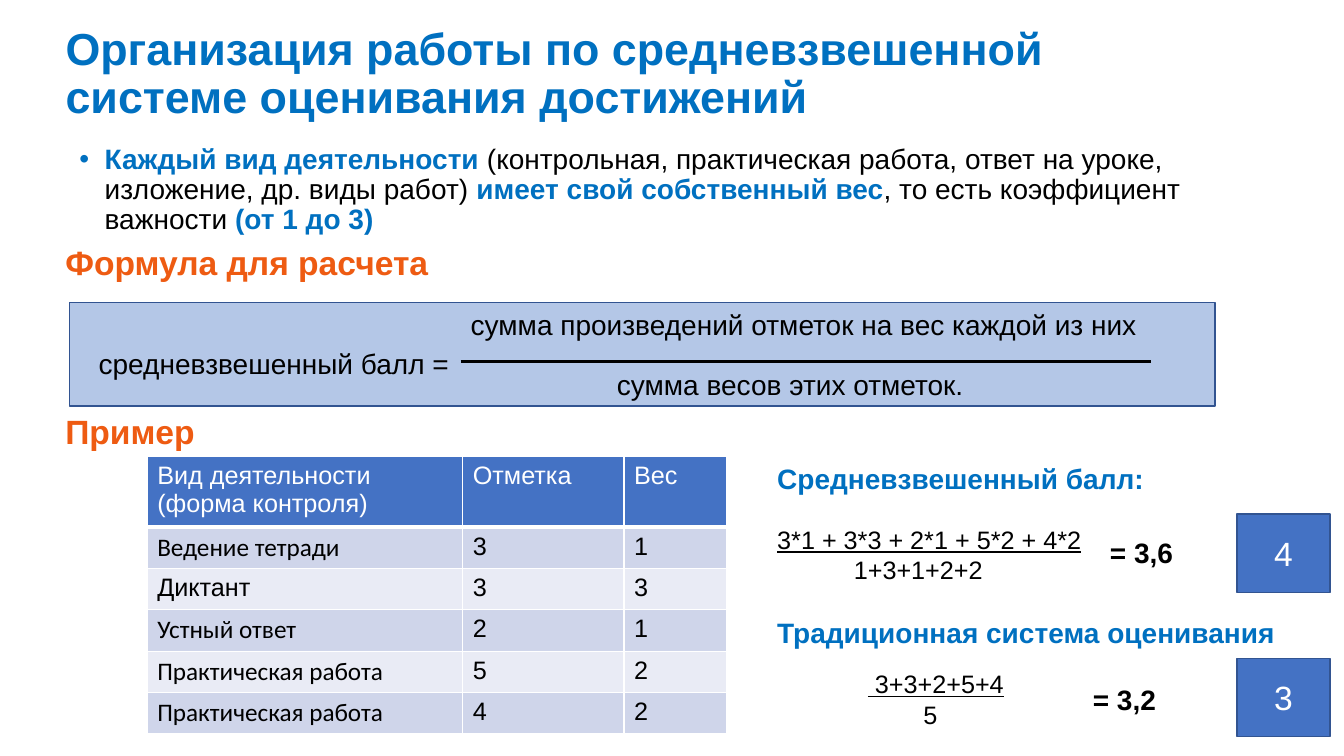
from lxml.etree import SubElement
from pptx import Presentation
from pptx.dml.color import RGBColor
from pptx.enum.shapes import MSO_CONNECTOR, MSO_SHAPE
from pptx.enum.text import MSO_ANCHOR as Anchor, MSO_AUTO_SIZE as AutoSize, PP_ALIGN as Align
from pptx.oxml.ns import qn
from pptx.util import Inches, Pt

BLUE = RGBColor(0x00, 0x70, 0xC0)
ORANGE = RGBColor(0xEE, 0x5B, 0x12)
BLACK = RGBColor(0x00, 0x00, 0x00)
WHITE = RGBColor(0xFF, 0xFF, 0xFF)
ACCENT = RGBColor(0x44, 0x72, 0xC4)
OUTLINE = RGBColor(0x32, 0x54, 0x91)
FORMULA_FILL = RGBColor(0xB4, 0xC7, 0xE7)
BANDS = RGBColor(0xCF, 0xD5, 0xEA), RGBColor(0xE9, 0xEB, 0xF5)

HEADING = {"size": Pt(20), "bold": True, "color": BLUE}
SECTION = {"size": Pt(24), "bold": True, "color": ORANGE}
RESULT = {"size": Pt(20), "bold": True}
FRACTION = {"size": Pt(18)}
NUMERATOR = FRACTION | {"underline": True}


def inches(*values):
    return [Inches(value) for value in values]


class SlideBuilder:
    base = {"name": "Arial", "size": Pt(20), "bold": False, "color": BLACK}

    def __init__(self, slide):
        self.slide = slide
        self.shapes = slide.shapes

    def run(self, paragraph, text, style):
        run = paragraph.add_run()
        run.text = text
        for key, value in (self.base | style).items():
            if key == "color":
                run.font.color.rgb = value
            else:
                setattr(run.font, key, value)

    def paragraph(self, frame, runs, layout=None, indent=0):
        """Write runs into the first paragraph if it is empty, else into a new one."""
        first = frame.paragraphs[0]
        paragraph = frame.add_paragraph() if first.runs else first
        if indent:
            paragraph._p.get_or_add_pPr().set("marL", str(Inches(indent)))
        for key, value in (layout or {}).items():
            setattr(paragraph, key, value)
        for text, style in runs:
            self.run(paragraph, text, style)
        return paragraph

    def title(self, text, box):
        title = self.shapes.title
        title.left, title.top, title.width, title.height = inches(*box)
        frame = title.text_frame
        frame.auto_size = AutoSize.NONE
        frame.vertical_anchor = Anchor.MIDDLE
        style = {"size": Pt(32), "bold": True, "color": BLUE}
        self.paragraph(frame, [(text, style)], {"alignment": Align.LEFT, "line_spacing": 0.9})

    def text_box(self, box, wrap=False, anchor=Anchor.TOP):
        frame = self.shapes.add_textbox(*inches(*box)).text_frame
        frame.word_wrap = wrap
        frame.vertical_anchor = anchor
        return frame

    def label(self, text, box, style, anchor=Anchor.TOP):
        self.paragraph(self.text_box(box, anchor=anchor), [(text, style)])

    def bullet(self, runs, box):
        frame = self.text_box(box, wrap=True)
        paragraph = frame.paragraphs[0]
        properties = paragraph._p.get_or_add_pPr()
        properties.set("indent", str(Inches(-0.25)))
        bullet_color = SubElement(properties, qn("a:buClr"))
        SubElement(bullet_color, qn("a:srgbClr")).set("val", str(BLUE))
        SubElement(properties, qn("a:buFont")).set("typeface", "Arial")
        SubElement(properties, qn("a:buChar")).set("char", "•")
        self.paragraph(frame, runs, {"line_spacing": 0.9}, indent=0.25)

    def rectangle(self, box, fill, text=""):
        rectangle = self.shapes.add_shape(MSO_SHAPE.RECTANGLE, *inches(*box))
        rectangle.shadow.inherit = False
        rectangle.fill.solid()
        rectangle.fill.fore_color.rgb = fill
        rectangle.line.color.rgb = OUTLINE
        rectangle.line.width = Pt(1)
        if text:
            rectangle.text_frame.vertical_anchor = Anchor.MIDDLE
            style = {"size": Pt(24), "color": WHITE}
            self.paragraph(rectangle.text_frame, [(text, style)], {"alignment": Align.CENTER})

    def line(self, start, end):
        line = self.shapes.add_connector(MSO_CONNECTOR.STRAIGHT, *inches(*start, *end))
        line.line.color.rgb = BLACK
        line.line.width = Pt(2.25)
        SubElement(line._element.spPr, qn("a:effectLst"))

    def cell(self, cell, text, fill, style, bottom=1):
        properties = cell._tc.get_or_add_tcPr()
        for side, width in (("L", 1), ("R", 1), ("T", 1), ("B", bottom)):
            border = SubElement(properties, qn(f"a:ln{side}"))
            border.set("w", str(Pt(width)))
            border_fill = SubElement(border, qn("a:solidFill"))
            SubElement(border_fill, qn("a:srgbClr")).set("val", str(WHITE))
        cell.fill.solid()
        cell.fill.fore_color.rgb = fill
        for line in text.split("\n"):
            self.paragraph(cell.text_frame, [(line, {"size": Pt(18)} | style)])

    def table(self, rows, box, widths, heights):
        table = self.shapes.add_table(len(rows), len(widths), *inches(*box)).table
        for column, width in zip(table.columns, widths):
            column.width = Inches(width)
        for row, height in zip(table.rows, heights):
            row.height = Inches(height)
        for column, text in enumerate(rows[0]):
            self.cell(table.cell(0, column), text, ACCENT, {"color": WHITE}, bottom=3)
        for index, row in enumerate(rows[1:], 1):
            for column, text in enumerate(row):
                calibri = column == 0 and text != "Диктант"
                style = {"name": "Calibri" if calibri else "Arial"}
                self.cell(table.cell(index, column), text, BANDS[(index - 1) % 2], style)

    def calculation(self, box, heading, numerator, denominator, gap, indents, wrap=False):
        """Write a heading with a fraction under it."""
        frame = self.text_box(box, wrap)
        self.paragraph(frame, [(heading, HEADING)])
        self.paragraph(frame, [(numerator, NUMERATOR)], {"space_before": Pt(gap)}, indents[0])
        self.paragraph(frame, [(denominator, FRACTION)], indent=indents[1])

    def result(self, text, box):
        self.paragraph(self.text_box(box, wrap=True), [(text, RESULT)])


def main():
    presentation = Presentation()
    presentation.slide_width, presentation.slide_height = inches(13.33, 7.5)
    builder = SlideBuilder(presentation.slides.add_slide(presentation.slide_layouts[5]))

    builder.title("Организация работы по средневзвешенной системе оценивания достижений",
                  (0.55, 0.4, 11.5, 0.69))
    builder.bullet([
        ("Каждый вид деятельности ", HEADING),
        ("(контрольная, практическая работа, ответ на уроке, изложение, др. виды работ) ", {}),
        ("имеет свой собственный вес", HEADING),
        (", то есть коэффициент важности ", {}),
        ("(от 1 до 3)", HEADING),
    ], (0.69, 1.39, 11.13, 4.95))

    builder.label("Формула для расчета", (0.55, 2.35, 3.93, 0.51), SECTION)
    builder.rectangle((0.69, 3, 11.36, 1.03), FORMULA_FILL)
    for text, box in (
        ("средневзвешенный балл =", (0.88, 3.38, 3.7, 0.44)),
        ("сумма произведений отметок на вес каждой из них", (4.57, 3, 6.85, 0.44)),
        ("сумма весов этих отметок.", (6.02, 3.59, 3.66, 0.44)),
    ):
        builder.label(text, box, {}, Anchor.MIDDLE)
    builder.line((4.57, 3.59), (11.42, 3.59))

    builder.label("Пример", (0.55, 4.03, 1.5, 0.5), SECTION)
    marks = [
        ("Вид деятельности\n(форма контроля)", "Отметка", "Вес"),
        ("Ведение тетради", "3", "1"),
        ("Диктант", "3", "3"),
        ("Устный ответ", "2", "1"),
        ("Практическая работа", "5", "2"),
        ("Практическая работа", "4", "2"),
    ]
    builder.table(marks, (1.46, 4.53, 5.75, 2.73), (3.13, 1.6, 1.02), [0.7] + [0.41] * 5)

    builder.calculation((7.61, 4.53, 4.21, 1.35), "Средневзвешенный балл:",
                        "3*1 + 3*3 + 2*1 + 5*2 + 4*2", "1+3+1+2+2", 20.7, (0, 0.76), wrap=True)
    builder.calculation((7.61, 6.06, 5.17, 1.24), "Традиционная система оценивания",
                        " 3+3+2+5+4", "5", 13.8, (0.9, 1.45))
    builder.result("= 3,6", (10.91, 5.26, 1.35, 0.44))
    builder.result("= 3,2", (10.74, 6.72, 1.35, 0.44))
    for grade, top in (("4", 5.1), ("3", 6.53)):
        builder.rectangle((12.27, top, 0.92, 0.78), ACCENT, grade)

    presentation.save("out.pptx")


if __name__ == "__main__":
    main()
